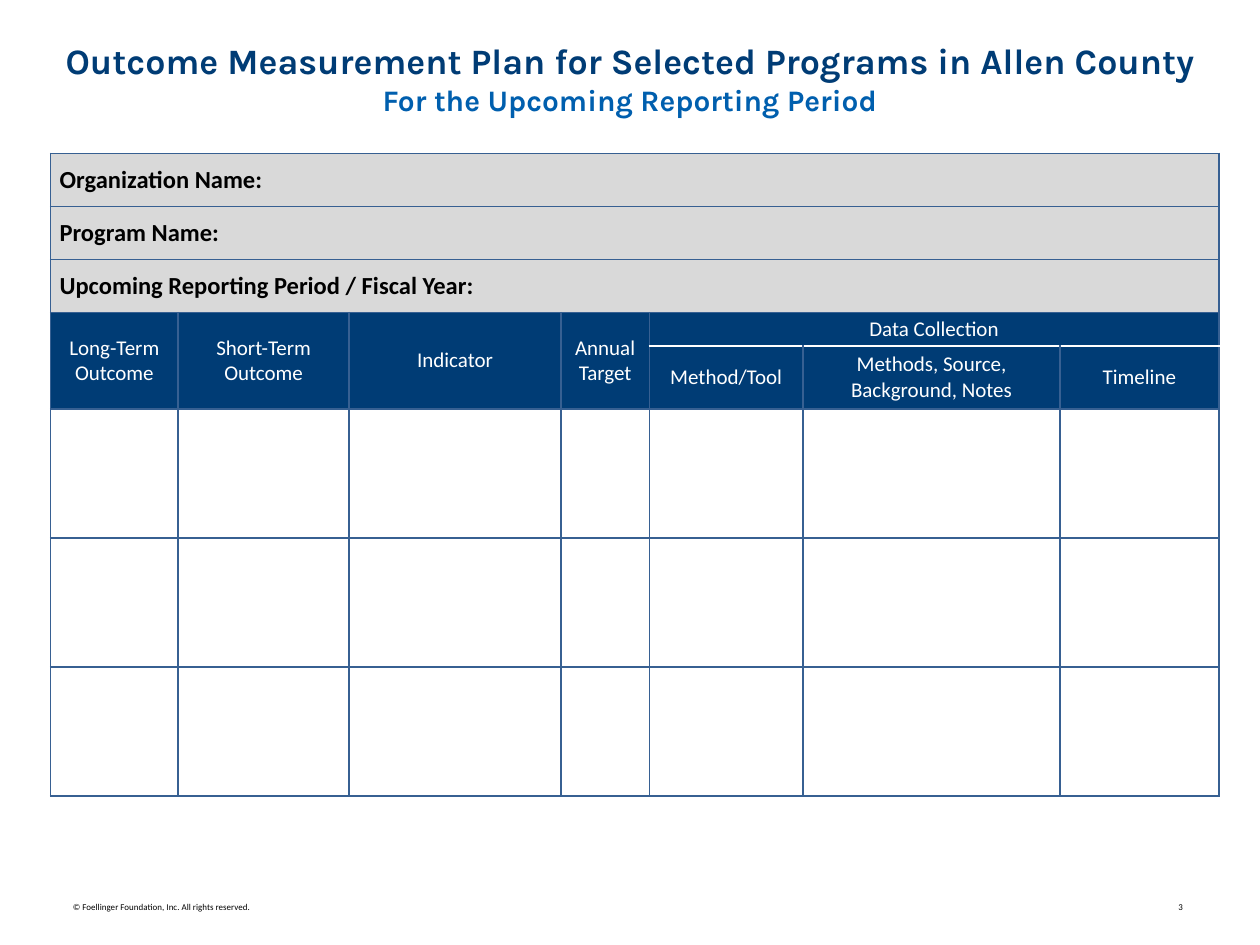
import pptx
import pptx.dml.color
import pptx.enum.text
import pptx.util
from lxml import etree
from pptx.oxml.ns import qn

Cm = pptx.util.Cm
Pt = pptx.util.Pt
ALIGN = pptx.enum.text.PP_ALIGN
ANCHOR = pptx.enum.text.MSO_ANCHOR

COLORS = {
    "navy": "003C75",
    "blue": "005FAE",
    "border": "376092",
    "gray": "D9D9D9",
    "white": "FFFFFF",
    "black": "000000",
}
COL_WIDTHS = [2.57, 3.45, 4.27, 1.78, 3.1, 5.18, 3.2]
ROW_HEIGHTS = [1.07] * 3 + [0.66, 1.27] + [2.6] * 3
INFO_LABELS = [
    "Organization Name:",
    "Program Name:",
    "Upcoming Reporting Period / Fiscal Year:",
]
MAIN_HEADERS = ["Long-Term Outcome", "Short-Term Outcome", "Indicator", "Annual\nTarget"]
COLLECTION_HEADERS = ["Method/Tool", "Methods, Source, Background, Notes", "Timeline"]
INFO_ROWS = len(INFO_LABELS)
GROUP_ROW = INFO_ROWS
SUB_ROW = GROUP_ROW + 1
GROUP_COL = len(MAIN_HEADERS)
LAST_COL = len(COL_WIDTHS) - 1


def rgb(name):
    return pptx.dml.color.RGBColor.from_string(COLORS[name])


def style_run(r, font, size, color, bold=False):
    r.font.name = font
    r.font.size = Pt(size)
    r.font.bold = bold
    r.font.color.rgb = rgb(color)


def add_text_box(s, left, top, width, height, anchor=ANCHOR.TOP):
    tf = s.shapes.add_textbox(Cm(left), Cm(top), Cm(width), Cm(height)).text_frame
    tf.word_wrap = True
    tf.vertical_anchor = anchor
    return tf.paragraphs[0]


def add_title(s):
    p = add_text_box(s, 0, 0.66, 25.4, 1.96)
    p.text = (
        "Outcome Measurement Plan for Selected Programs in Allen County\v"
        "For the Upcoming Reporting Period"
    )
    p.alignment = ALIGN.CENTER
    for r, size, color in zip(p.runs, (20.4, 17), ("navy", "blue")):
        style_run(r, "Karla", size, color, bold=True)


def add_footer(s):
    p = add_text_box(s, 1.22, 17.78, 22.96, 1.02, ANCHOR.MIDDLE)
    tabs = etree.SubElement(p._p.get_or_add_pPr(), qn("a:tabLst"))
    etree.SubElement(tabs, qn("a:tab"), pos=str(Cm(22.38)), algn="r")
    p.text = "© Foellinger Foundation, Inc. All rights reserved.\t3"
    for r in p.runs:
        style_run(r, "Calibri", 5.1, "black")


def set_borders(cell, **overrides):
    tc_pr = cell._tc.get_or_add_tcPr()
    for side in "LRTB":
        ln = etree.SubElement(tc_pr, qn(f"a:ln{side}"), w=str(Pt(1)))
        fill = etree.SubElement(ln, qn("a:solidFill"))
        color = COLORS[overrides.get(side, "border")]
        etree.SubElement(fill, qn("a:srgbClr"), val=color)


def format_cell(cell, row, col):
    overrides = {}
    if col >= GROUP_COL and row in (GROUP_ROW, SUB_ROW):
        overrides["B" if row == GROUP_ROW else "T"] = "white"
    set_borders(cell, **overrides)
    cell.margin_left = cell.margin_right = Cm(0.18)
    cell.margin_top = cell.margin_bottom = Cm(0.08)
    cell.vertical_anchor = ANCHOR.MIDDLE
    fill = "gray" if row < INFO_ROWS else "navy" if row <= SUB_ROW else "white"
    cell.fill.solid()
    cell.fill.fore_color.rgb = rgb(fill)
    for p in cell.text_frame.paragraphs:
        if not p.runs:
            p._p.get_or_add_endParaRPr().set("sz", "1200")
        for r in p.runs:
            if row < INFO_ROWS:
                style_run(r, "Calibri", 14, "black", bold=True)
            else:
                p.alignment = ALIGN.CENTER
                style_run(r, "Calibri", 12, "white")


def add_plan_table(s):
    table = s.shapes.add_table(
        len(ROW_HEIGHTS), len(COL_WIDTHS), Cm(1.02), Cm(3.09),
        Cm(sum(COL_WIDTHS)), Cm(sum(ROW_HEIGHTS)),
    ).table
    table.first_row = table.horz_banding = False
    for column, width in zip(table.columns, COL_WIDTHS):
        column.width = Cm(width)
    for row, height in zip(table.rows, ROW_HEIGHTS):
        row.height = Cm(height)

    for row, label in enumerate(INFO_LABELS):
        table.cell(row, 0).merge(table.cell(row, LAST_COL))
        table.cell(row, 0).text_frame.text = label
    for col, label in enumerate(MAIN_HEADERS):
        table.cell(GROUP_ROW, col).merge(table.cell(SUB_ROW, col))
        table.cell(GROUP_ROW, col).text_frame.text = label
    table.cell(GROUP_ROW, GROUP_COL).merge(table.cell(GROUP_ROW, LAST_COL))
    table.cell(GROUP_ROW, GROUP_COL).text_frame.text = "Data Collection"
    for col, label in enumerate(COLLECTION_HEADERS, GROUP_COL):
        table.cell(SUB_ROW, col).text_frame.text = label

    for row in range(len(ROW_HEIGHTS)):
        for col in range(len(COL_WIDTHS)):
            format_cell(table.cell(row, col), row, col)


def main():
    prs = pptx.Presentation()
    prs.slide_width = Cm(25.4)
    prs.slide_height = Cm(19.05)
    s = prs.slides.add_slide(prs.slide_layouts[6])
    add_plan_table(s)
    add_title(s)
    add_footer(s)
    prs.save("out.pptx")


if __name__ == "__main__":
    main()
